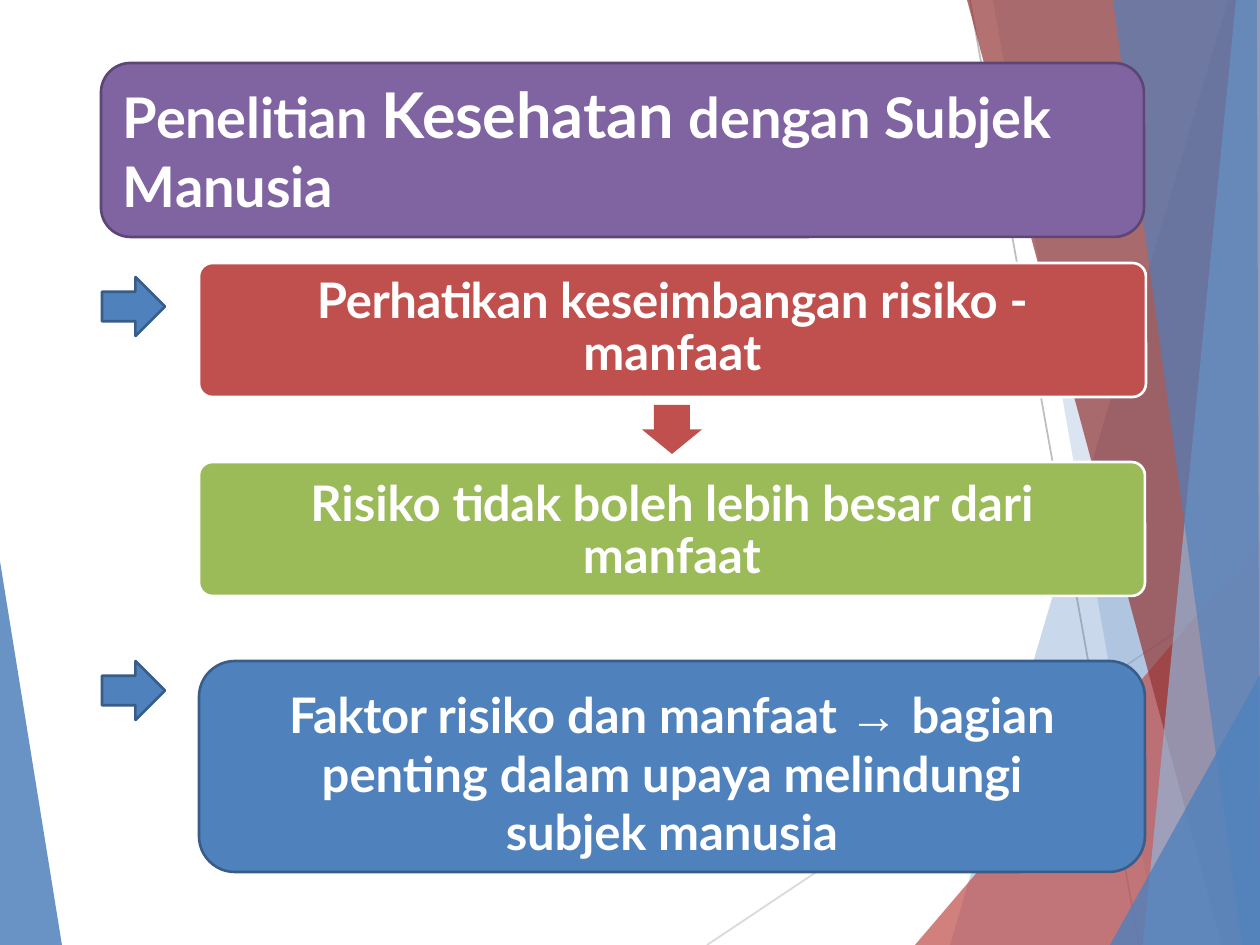
from dataclasses import dataclass

from lxml import etree
from pptx import Presentation
from pptx.dml.color import RGBColor
from pptx.enum.shapes import MSO_CONNECTOR, MSO_SHAPE
from pptx.enum.text import MSO_ANCHOR, MSO_AUTO_SIZE, PP_ALIGN
from pptx.oxml.ns import qn
from pptx.util import Emu, Pt

ROUNDED = MSO_SHAPE.ROUNDED_RECTANGLE
RIGHT_ARROW = MSO_SHAPE.RIGHT_ARROW
DOWN_ARROW = MSO_SHAPE.DOWN_ARROW
STRAIGHT = MSO_CONNECTOR.STRAIGHT
TOP, MIDDLE = MSO_ANCHOR.TOP, MSO_ANCHOR.MIDDLE
LEFT, CENTER = PP_ALIGN.LEFT, PP_ALIGN.CENTER
NO_AUTOFIT = MSO_AUTO_SIZE.NONE

SCALE = 914400 / 126
WIDTH, HEIGHT = 1260, 945
BLUE, NAVY, RED, WHITE = "4F81BC", "385D89", "C0504D", "FFFFFF"


@dataclass
class Facet:
    points: list[tuple[int, int]]
    color: str
    alpha: int


@dataclass
class Run:
    text: str
    spacing: int = 0
    size: int = 28
    font: str = "Lato"
    bold: bool = True


@dataclass
class Box:
    rect: tuple[int, int, int, int]
    fill: str
    line: str
    radius: float
    runs: list[Run]
    top_inset: int = 0
    bottom_inset: int = 0
    line_pt: float | None = None


LEFT_FACET = Facet([(0, 561), (0, HEIGHT), (62, HEIGHT)], BLUE, 85)
RIGHT_FACETS = [
    Facet([(1228, 0), (950, HEIGHT), (WIDTH, HEIGHT), (WIDTH, 0)], BLUE, 30),
    Facet([(WIDTH, 0), (993, 0), (1158, HEIGHT), (WIDTH, HEIGHT)], BLUE, 20),
    Facet([(WIDTH, 541), (915, HEIGHT), (WIDTH, HEIGHT)], RED, 72),
    Facet([(WIDTH, 0), (967, 0), (1222, HEIGHT), (WIDTH, HEIGHT)], "943735", 70),
    Facet([(WIDTH, 0), (1236, 0), (1143, HEIGHT), (WIDTH, HEIGHT)], "94B3D6", 70),
    Facet([(1257, 0), (1113, 0), (1242, HEIGHT), (WIDTH, HEIGHT), (1257, 34)], BLUE, 65),
    Facet([(WIDTH, 675), (1110, HEIGHT), (WIDTH, HEIGHT)], BLUE, 80),
]
TITLE_RUNS = [
    Run("Penelitian ", -20, 32),
    Run("Kesehatan ", -10, 36),
    Run("dengan ", -10, 32),
    Run("Subjek ", 0, 32),
    Run("Manusia", -10, 32),
]
BOXES = [
    Box((199, 263, 947, 134), RED, WHITE, 0.1, [
        Run("Perhatikan ", -20),
        Run("keseimbangan ", -10),
        Run("risiko - manfaat"),
    ], bottom_inset=3, line_pt=29.4),
    Box((199, 462, 946, 134), "9BBA58", WHITE, 0.1, [
        Run("Risiko "),
        Run("tidak boleh lebih besar ", -10),
        Run("dari manfaat"),
    ], top_inset=5, line_pt=29.4),
    Box((199, 661, 946, 211), BLUE, NAVY, 0.17, [
        Run("Faktor ", -20),
        Run("risiko dan manfaat "),
        Run("→ ", font="Arial", bold=False),
        Run("bagian penting dalam upaya "),
        Run("melindungi subjek ", -10),
        Run("manusia"),
    ], top_inset=12),
]


def px(n: float) -> Emu:
    return Emu(round(n * SCALE))


def rgb(color: str) -> RGBColor:
    return RGBColor.from_string(color)


def style(s, fill: str, line: str | None = None) -> None:
    s.shadow.inherit = False
    s.fill.solid()
    s.fill.fore_color.rgb = rgb(fill)
    if line:
        s.line.color.rgb = rgb(line)
        s.line.width = Pt(1.5)
    else:
        s.line.fill.background()


def add_facet(shapes, facet: Facet) -> None:
    (x, y), *rest = facet.points
    builder = shapes.build_freeform(x, y, scale=SCALE)
    builder.add_line_segments(rest, close=True)
    sp = builder.convert_to_shape()
    style(sp, facet.color)
    clr = sp.fill._xPr.find(qn("a:solidFill"))[0]
    etree.SubElement(clr, qn("a:alpha")).set("val", str(facet.alpha * 1000))


def add_line(shapes, x1: int, y1: int, x2: int, y2: int, color: str) -> None:
    c = shapes.add_connector(STRAIGHT, px(x1), px(y1), px(x2), px(y2))
    c.line.color.rgb = rgb(color)
    c.line.width = Pt(1)
    etree.SubElement(c._element.spPr, qn("a:effectLst"))


def add_preset(shapes, kind, rect: tuple[int, int, int, int], fill: str,
               line: str | None = None, adjust: float | None = None):
    sp = shapes.add_shape(kind, *map(px, rect))
    style(sp, fill, line)
    if adjust is not None:
        sp.adjustments[0] = adjust
    return sp


def write(tf, runs: list[Run], align, anchor, side: int, top: int, bottom: int = 0):
    tf.word_wrap = True
    tf.auto_size = NO_AUTOFIT
    tf.vertical_anchor = anchor
    tf.margin_left = tf.margin_right = px(side)
    tf.margin_top, tf.margin_bottom = px(top), px(bottom)
    p = tf.paragraphs[0]
    p.alignment = align
    for run in runs:
        r = p.add_run()
        r.text = run.text
        r.font.name = run.font
        r.font.size = Pt(run.size)
        r.font.bold = run.bold
        r.font.color.rgb = rgb(WHITE)
        r._r.get_or_add_rPr().set("spc", str(run.spacing))
    return p


def add_box(shapes, box: Box) -> None:
    sp = add_preset(shapes, ROUNDED, box.rect, box.fill, box.line, box.radius)
    p = write(sp.text_frame, box.runs, CENTER, MIDDLE, 60, box.top_inset, box.bottom_inset)
    if box.line_pt:
        p.line_spacing = Pt(box.line_pt)


def main() -> None:
    prs = Presentation()
    prs.slide_width, prs.slide_height = px(WIDTH), px(HEIGHT)
    slide = prs.slides.add_slide(prs.slide_layouts[5])
    shapes = slide.shapes

    add_facet(shapes, LEFT_FACET)
    add_line(shapes, 707, HEIGHT, WIDTH, 576, "D9D9D9")
    add_line(shapes, 970, 0, 1139, HEIGHT, "BEBEBE")
    for facet in RIGHT_FACETS:
        add_facet(shapes, facet)

    add_preset(shapes, ROUNDED, (101, 63, 1043, 174), "8063A1", "5C4676", 0.17)
    title = shapes.title
    title.left, title.top, title.width, title.height = map(px, (121, 74, 989, 146))
    write(title.text_frame, TITLE_RUNS, LEFT, TOP, 2, 2)
    shapes._spTree.append(title._element)

    for box in BOXES:
        add_box(shapes, box)
    for y in (277, 661):
        add_preset(shapes, RIGHT_ARROW, (102, y, 63, 59), BLUE, NAVY)
    add_preset(shapes, DOWN_ARROW, (642, 405, 60, 49), RED, adjust=0.6)

    prs.save("out.pptx")


if __name__ == "__main__":
    main()
